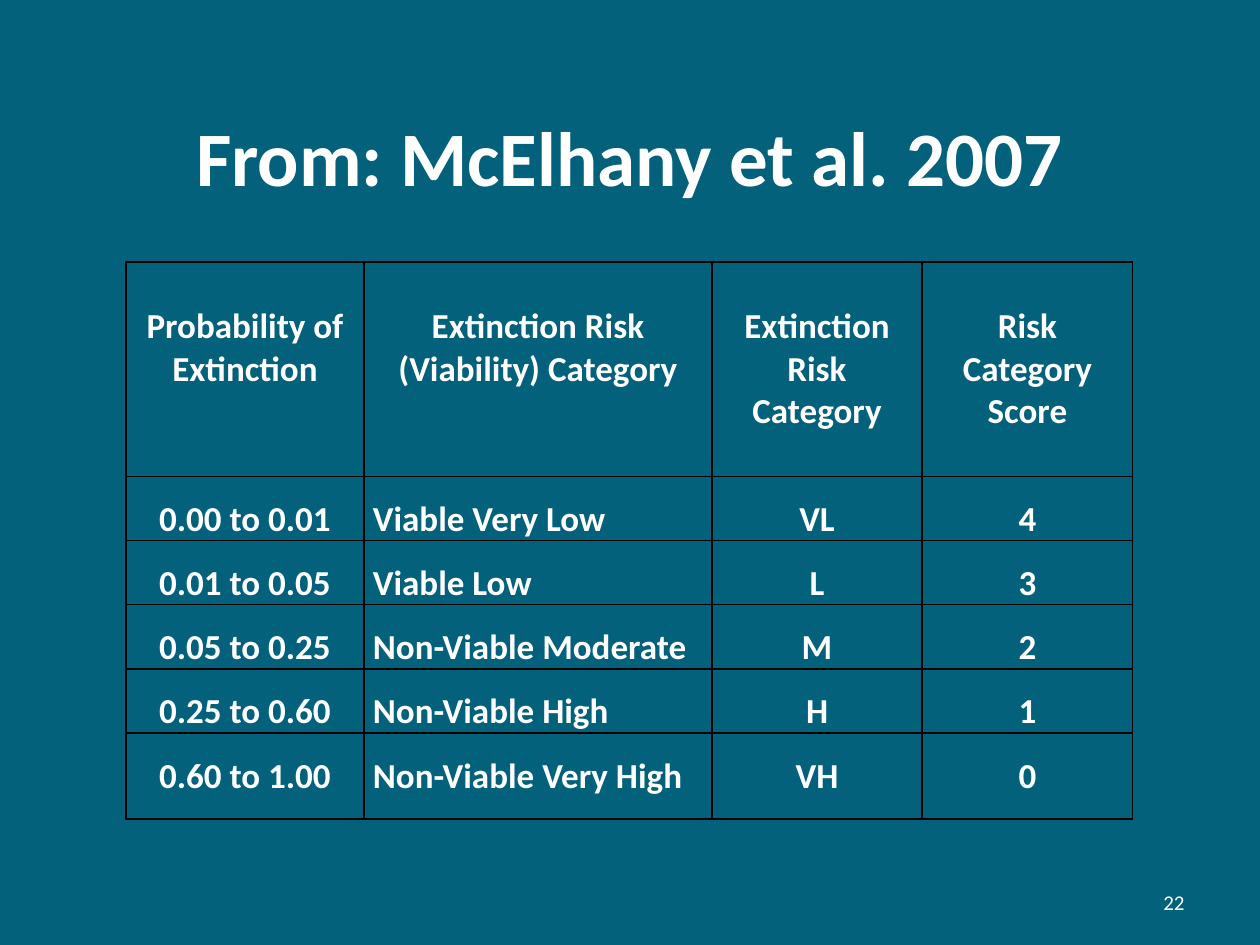
"""Build a slide with a table of extinction risk categories."""
import pptx
import pptx.util
import pptx.dml.color
import pptx.enum.text
import lxml.etree
from dataclasses import dataclass


@dataclass
class Theme:
    back: str = "04617B"
    text: str = "FFFFFF"
    line: str = "000000"
    font: str = "Calibri"
    title: int = 44
    body: int = 20
    small: int = 12


theme = Theme()
Inches, Pt = pptx.util.Inches, pptx.util.Pt
Color = pptx.dml.color.RGBColor.from_string
Align = pptx.enum.text.PP_ALIGN
Anchor = pptx.enum.text.MSO_ANCHOR

deck = pptx.Presentation()
deck.slide_width, deck.slide_height = Inches(10), Inches(7.5)
wide, high = deck.slide_width, deck.slide_height
slide = deck.slides.add_slide(deck.slide_layouts[6])
slide.background.fill.solid()
slide.background.fill.fore_color.rgb = Color(theme.back)


def write(frame, text, size, bold, align):
    para = frame.paragraphs[0]
    para.alignment = align
    run = para.add_run()
    run.text = text
    run.font.name = theme.font
    run.font.size = Pt(size)
    run.font.bold = bold
    run.font.color.rgb = Color(theme.text)
    return para


def edge(cell):
    props = cell._tc.get_or_add_tcPr()
    space = props.nsmap["a"]
    for side in ("lnL", "lnR", "lnT", "lnB"):
        line = lxml.etree.SubElement(props, f"{{{space}}}{side}", w=str(Pt(1)))
        fill = lxml.etree.SubElement(line, f"{{{space}}}solidFill")
        lxml.etree.SubElement(fill, f"{{{space}}}srgbClr", val=theme.line)


labels = [
    ("From: McElhany et al. 2007", (0.05, 0.1, 0.9, 0.13), theme.title, True, Align.CENTER),
    ("22", (0.72, 0.93, 0.23, 0.05), theme.small, False, Align.RIGHT),
]
for text, (left, top, width, height), size, bold, align in labels:
    box = slide.shapes.add_textbox(
        int(left * wide), int(top * high), int(width * wide), int(height * high))
    box.text_frame.word_wrap = True
    box.text_frame.vertical_anchor = Anchor.MIDDLE
    write(box.text_frame, text, size, bold, align)

data = [
    ("Probability of Extinction", "Extinction Risk (Viability) Category",
     "Extinction Risk Category", "Risk Category Score"),
    ("0.00 to 0.01", "Viable Very Low", "VL", "4"),
    ("0.01 to 0.05", "Viable Low", "L", "3"),
    ("0.05 to 0.25", "Non-Viable Moderate", "M", "2"),
    ("0.25 to 0.60", "Non-Viable High", "H", "1"),
    ("0.60 to 1.00", "Non-Viable Very High", "VH", "0"),
]
cols = [1.89, 2.76, 1.67, 1.67]
rows = [1.7] + [0.51] * 4 + [0.68]
table = slide.shapes.add_table(
    len(rows), len(cols), wide // 10, Inches(2.08),
    Inches(sum(cols)), Inches(sum(rows))).table
table.first_row = table.horz_banding = False
for col, width in zip(table.columns, cols):
    col.width = Inches(width)

for r, (height, words) in enumerate(zip(rows, data)):
    table.rows[r].height = Inches(height)
    for c, text in enumerate(words):
        cell = table.cell(r, c)
        edge(cell)
        cell.fill.background()
        cell.margin_left = cell.margin_right = Inches(0.07)
        cell.margin_top = Inches(0 if r else 0.34)
        cell.margin_bottom = 0
        align = Align.LEFT if r and c == 1 else Align.CENTER
        para = write(cell.text_frame, text, theme.body, True, align)
        if r:
            para.line_spacing = 1.5
            para.space_before = para.space_after = Pt(6)

deck.save("out.pptx")
